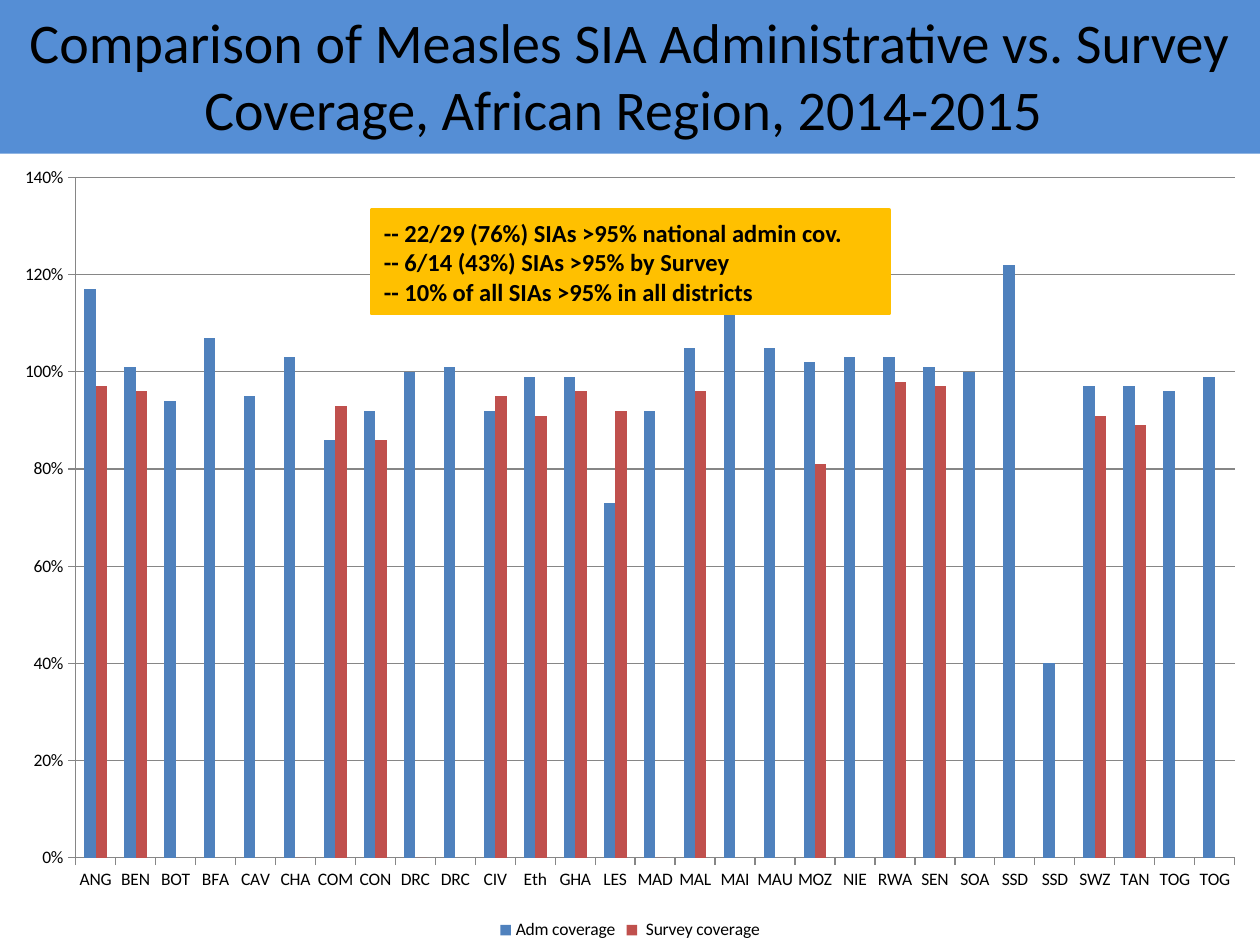
from dataclasses import dataclass

import pptx
import pptx.chart.data
import pptx.dml.color
import pptx.enum.chart
import pptx.enum.shapes
import pptx.enum.text
import pptx.oxml
import pptx.oxml.ns
import pptx.util
from pptx.util import Cm

BLACK = pptx.dml.color.RGBColor(0x00, 0x00, 0x00)
GREY = pptx.dml.color.RGBColor(0x86, 0x86, 0x86)
TITLE_BLUE = pptx.dml.color.RGBColor(0x55, 0x8E, 0xD5)
AMBER = pptx.dml.color.RGBColor(0xFF, 0xC0, 0x00)
ADM_BLUE = pptx.dml.color.RGBColor(0x4F, 0x81, 0xBD)
SURVEY_RED = pptx.dml.color.RGBColor(0xC0, 0x50, 0x4D)
FONT = "Calibri"


@dataclass
class Box:
    left: float
    top: float
    width: float
    height: float
    fill: pptx.dml.color.RGBColor
    lines: tuple[str, ...]
    size: int
    bold: bool
    align: pptx.enum.text.PP_ALIGN
    border: float = 0


@dataclass
class Coverage:
    country: str
    adm: float
    survey: float | None = None


TITLE = Box(0, -0.08, 25.4, 3.18, TITLE_BLUE,
            ("Comparison of Measles SIA Administrative vs. Survey "
             "Coverage, African Region, 2014-2015 ",),
            32, False, pptx.enum.text.PP_ALIGN.CENTER)
SUMMARY = Box(7.49, 4.24, 10.44, 2.08, AMBER,
              ("-- 22/29 (76%) SIAs >95% national admin cov.",
               "-- 6/14 (43%) SIAs >95% by Survey",
               "-- 10% of all SIAs >95% in all districts"),
              14, True, pptx.enum.text.PP_ALIGN.LEFT, 2.25)
COVERAGES = [
    Coverage("ANG", 1.17, 0.97), Coverage("BEN", 1.01, 0.96),
    Coverage("BOT", 0.94), Coverage("BFA", 1.07),
    Coverage("CAV", 0.95), Coverage("CHA", 1.03, 0),
    Coverage("COM", 0.86, 0.93), Coverage("CON", 0.92, 0.86),
    Coverage("DRC", 1, 0), Coverage("DRC", 1.01),
    Coverage("CIV", 0.92, 0.95), Coverage("Eth", 0.99, 0.91),
    Coverage("GHA", 0.99, 0.96), Coverage("LES", 0.73, 0.92),
    Coverage("MAD", 0.92, 0), Coverage("MAL", 1.05, 0.96),
    Coverage("MAI", 1.12), Coverage("MAU", 1.05),
    Coverage("MOZ", 1.02, 0.81), Coverage("NIE", 1.03),
    Coverage("RWA", 1.03, 0.98), Coverage("SEN", 1.01, 0.97),
    Coverage("SOA", 1), Coverage("SSD", 1.22),
    Coverage("SSD", 0.4), Coverage("SWZ", 0.97, 0.91),
    Coverage("TAN", 0.97, 0.89), Coverage("TOG", 0.96),
    Coverage("TOG", 0.99),
]


def add_box(s: pptx.slide.Slide, box: Box) -> None:
    sp = s.shapes.add_shape(pptx.enum.shapes.MSO_SHAPE.RECTANGLE, Cm(box.left),
                            Cm(box.top), Cm(box.width), Cm(box.height))
    sp.shadow.inherit = False
    sp.fill.solid()
    sp.fill.fore_color.rgb = box.fill
    if box.border:
        sp.line.color.rgb = box.fill
        sp.line.width = pptx.util.Pt(box.border)
    else:
        sp.line.fill.background()
    tf = sp.text_frame
    tf.word_wrap = True
    tf.vertical_anchor = pptx.enum.text.MSO_ANCHOR.MIDDLE
    for i, line in enumerate(box.lines):
        p = tf.add_paragraph() if i else tf.paragraphs[0]
        p.alignment = box.align
        r = p.add_run()
        r.text = line
        r.font.name = FONT
        r.font.size = pptx.util.Pt(box.size)
        r.font.bold = box.bold
        r.font.color.rgb = BLACK


def set_plot_area(chart: pptx.chart.chart.Chart, x: float, y: float, w: float, h: float) -> None:
    plot_area = chart.plots[0]._element.getparent()
    for old in plot_area.findall(pptx.oxml.ns.qn("c:layout")):
        plot_area.remove(old)
    sizes = "".join(f'<c:{tag} val="{val}"/>' for tag, val in
                    (("xMode", "edge"), ("yMode", "edge"), ("x", x), ("y", y), ("w", w), ("h", h)))
    plot_area.insert(0, pptx.oxml.parse_xml(
        f'<c:layout {pptx.oxml.ns.nsdecls("c")}><c:manualLayout>'
        f'<c:layoutTarget val="inner"/>{sizes}</c:manualLayout></c:layout>'))


def add_coverage_chart(s: pptx.slide.Slide, coverages: list[Coverage]) -> None:
    data = pptx.chart.data.CategoryChartData(number_format="0.0%")
    data.categories = [c.country for c in coverages]
    data.add_series("Adm coverage", [c.adm for c in coverages])
    data.add_series(" Survey coverage", [c.survey for c in coverages])
    chart = s.shapes.add_chart(pptx.enum.chart.XL_CHART_TYPE.COLUMN_CLUSTERED,
                               Cm(0), Cm(3.1), Cm(25.4), Cm(15.95), data).chart
    chart.has_title = False
    chart.font.name = FONT
    chart.font.size = pptx.util.Pt(10)
    chart.font.color.rgb = BLACK
    chart.has_legend = True
    chart.legend.position = pptx.enum.chart.XL_LEGEND_POSITION.BOTTOM
    chart.legend.include_in_layout = False
    plot = chart.plots[0]
    plot.gap_width = 150
    plot.overlap = 0
    plot.vary_by_categories = False
    for series, color in zip(plot.series, (ADM_BLUE, SURVEY_RED)):
        series.format.fill.solid()
        series.format.fill.fore_color.rgb = color
        series.invert_if_negative = False
    for axis in (chart.category_axis, chart.value_axis):
        axis.major_tick_mark = pptx.enum.chart.XL_TICK_MARK.OUTSIDE
        axis.format.line.color.rgb = GREY
    axis = chart.value_axis
    axis.minimum_scale, axis.maximum_scale, axis.major_unit = 0, 1.4, 0.2
    axis.tick_labels.number_format = "0%"
    axis.tick_labels.number_format_is_linked = False
    axis.major_gridlines.format.line.color.rgb = GREY
    set_plot_area(chart, 0.06, 0.03, 0.92, 0.86)


def main() -> None:
    """Build the slide comparing administrative and survey measles coverage."""
    prs = pptx.Presentation()
    prs.slide_width, prs.slide_height = Cm(25.4), Cm(19.05)
    s = prs.slides.add_slide(prs.slide_layouts[6])
    add_box(s, TITLE)
    add_coverage_chart(s, COVERAGES)
    add_box(s, SUMMARY)
    prs.save("out.pptx")


if __name__ == "__main__":
    main()
